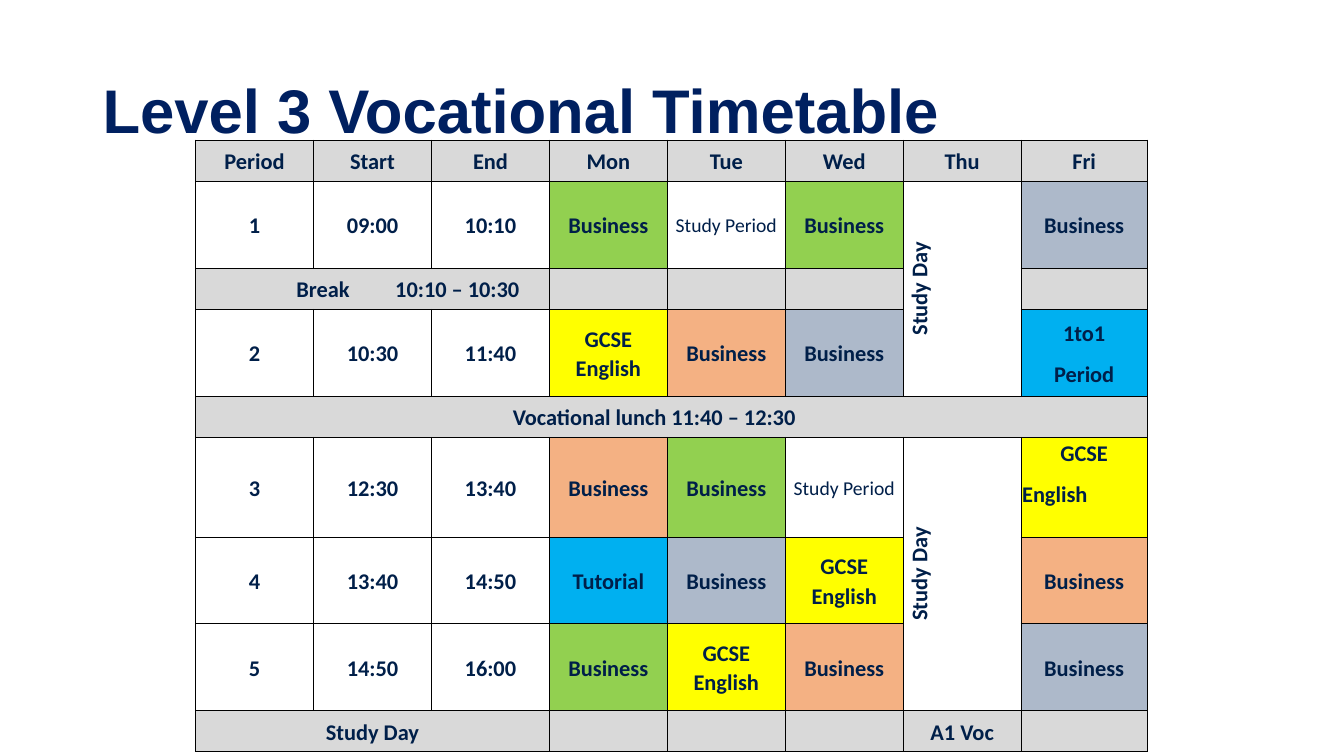
from lxml.etree import SubElement
from pptx import Presentation
from pptx.dml.color import RGBColor
from pptx.enum.text import MSO_ANCHOR as Anchor, PP_ALIGN as Align
from pptx.oxml.ns import qn
from pptx.util import Inches, Pt

COLOURS = {
    "title": "002060", "text": "001F49", "border": "000000", "white": "FFFFFF",
    "grey": "D9D9D9", "green": "92D050", "orange": "F4B183", "slate": "ADB9CA",
    "yellow": "FFFF00", "blue": "00B0F0",
}
LESSONS = {
    "B1": ("Business", "green"), "B2": ("Business", "orange"), "B3": ("Business", "slate"),
    "GE": ("GCSE English", "yellow"), "GE2": ("GCSE\nEnglish", "yellow"),
    "TU": ("Tutorial", "blue"), "1:1": ("1to1\nPeriod", "blue"),
    "SP": ("Study Period", "white"),
}
TIMETABLE = [
    ["Period", "Start", "End", "Mon", "Tue", "Wed", "Thu", "Fri"],
    ["1", "09:00", "10:10", "B1", "SP", "B1", "Study Day", "B3"],
    ["Break\t10:10 – 10:30", "", "", "", "", "", "", ""],
    ["2", "10:30", "11:40", "GE", "B2", "B3", "", "1:1"],
    ["Vocational lunch 11:40 – 12:30", "", "", "", "", "", "", ""],
    ["3", "12:30", "13:40", "B2", "B1", "SP", "Study Day", "GE2"],
    ["4", "13:40", "14:50", "TU", "B3", "GE", "", "B2"],
    ["5", "14:50", "16:00", "B1", "GE", "B2", "", "B3"],
    ["Study Day", "", "", "", "", "", "A1 Voc", ""],
]
GREY_ROWS = {0, 2, 4, 8}
THURSDAY = 6
MERGES = [((1, 6), (3, 6)), ((2, 0), (2, 2)), ((4, 0), (4, 7)),
          ((5, 6), (7, 6)), ((8, 0), (8, 2))]
COLUMN_WIDTHS = [1.17] * 7 + [1.25]
ROW_HEIGHTS = [0.41, 0.86, 0.41, 0.86, 0.41, 0.99, 0.86, 0.86, 0.41]


def colour(name):
    """Return the named colour."""
    return RGBColor.from_string(COLOURS[name])


def style_runs(paragraph, font_name, size, colour_name, bold):
    """Give every run of a paragraph the same font."""
    for run in paragraph.runs:
        font = run.font
        font.name, font.size, font.bold = font_name, Pt(size), bold
        font.color.rgb = colour(colour_name)


def add_title(slide, left, top, width, height):
    """Place the slide title in the given box."""
    frame = slide.shapes.add_textbox(left, top, width, height).text_frame
    frame.word_wrap = True
    frame.vertical_anchor = Anchor.MIDDLE
    frame.text = "Level 3 Vocational Timetable"
    frame.paragraphs[0].line_spacing = 0.9
    style_runs(frame.paragraphs[0], "Arial", 44, "title", True)


def add_borders(cell):
    """Draw a thin line on all four sides of a cell."""
    properties = cell._tc.get_or_add_tcPr()
    for side in ("a:lnL", "a:lnR", "a:lnT", "a:lnB"):
        line = SubElement(properties, qn(side), w=str(Pt(1)))
        fill = SubElement(line, qn("a:solidFill"))
        SubElement(fill, qn("a:srgbClr"), val=COLOURS["border"])


def fill_cell(cell, text, fill_name):
    """Format a cell and write its text."""
    add_borders(cell)
    cell.fill.solid()
    cell.fill.fore_color.rgb = colour(fill_name)
    cell.vertical_anchor = Anchor.MIDDLE
    cell.margin_left = cell.margin_right = cell.margin_top = Inches(0.01)
    cell.margin_bottom = 0
    cell.text_frame.text = text
    is_study_period = text == "Study Period"
    for paragraph in cell.text_frame.paragraphs:
        paragraph.alignment = Align.CENTER
        paragraph.line_spacing = 1.07
        paragraph.space_after = Pt(8)
        style_runs(paragraph, "Calibri", 14 if is_study_period else 16,
                   "text", not is_study_period)


def adjust_special_cells(table):
    """Set the off-centre and rotated texts."""
    for row in (1, 5):
        table.cell(row, THURSDAY)._tc.get_or_add_tcPr().set("vert", "vert270")

    break_cell = table.cell(2, 0)
    break_cell.margin_left = Inches(1)
    paragraph = break_cell.text_frame.paragraphs[0]
    paragraph.alignment = Align.LEFT
    tabs = SubElement(paragraph._p.get_or_add_pPr(), qn("a:tabLst"))
    SubElement(tabs, qn("a:tab"), pos=str(Inches(0.98)), algn="l")

    table.cell(4, 0).margin_right = Inches(0.35)

    friday_english = table.cell(5, 7)
    friday_english.vertical_anchor = Anchor.TOP
    friday_english.text_frame.paragraphs[1].alignment = Align.LEFT


def add_timetable(slide, left, top):
    """Build the timetable from its top left corner."""
    frame = slide.shapes.add_table(
        len(ROW_HEIGHTS), len(COLUMN_WIDTHS), left, top,
        Inches(sum(COLUMN_WIDTHS)), Inches(sum(ROW_HEIGHTS)))
    table = frame.table
    table.first_row = table.horz_banding = False
    for column, width in zip(table.columns, COLUMN_WIDTHS):
        column.width = Inches(width)
    for row, height in zip(table.rows, ROW_HEIGHTS):
        row.height = Inches(height)
    for row, entries in enumerate(TIMETABLE):
        base = "grey" if row in GREY_ROWS else "white"
        for column, entry in enumerate(entries):
            in_study_day = column == THURSDAY and 1 <= row <= 3
            default = (entry, "white" if in_study_day else base)
            fill_cell(table.cell(row, column), *LESSONS.get(entry, default))
    for first, last in MERGES:
        table.cell(*first).merge(table.cell(*last))
    adjust_special_cells(table)


def main():
    """Create and save the timetable slide."""
    presentation = Presentation()
    presentation.slide_width, presentation.slide_height = Inches(13.33), Inches(7.5)
    slide = presentation.slides.add_slide(presentation.slide_layouts[6])
    add_title(slide, Inches(0.92), Inches(0.4), Inches(11.5), Inches(1.45))
    add_timetable(slide, Inches(1.94), Inches(1.39))
    presentation.save("out.pptx")


if __name__ == "__main__":
    main()
